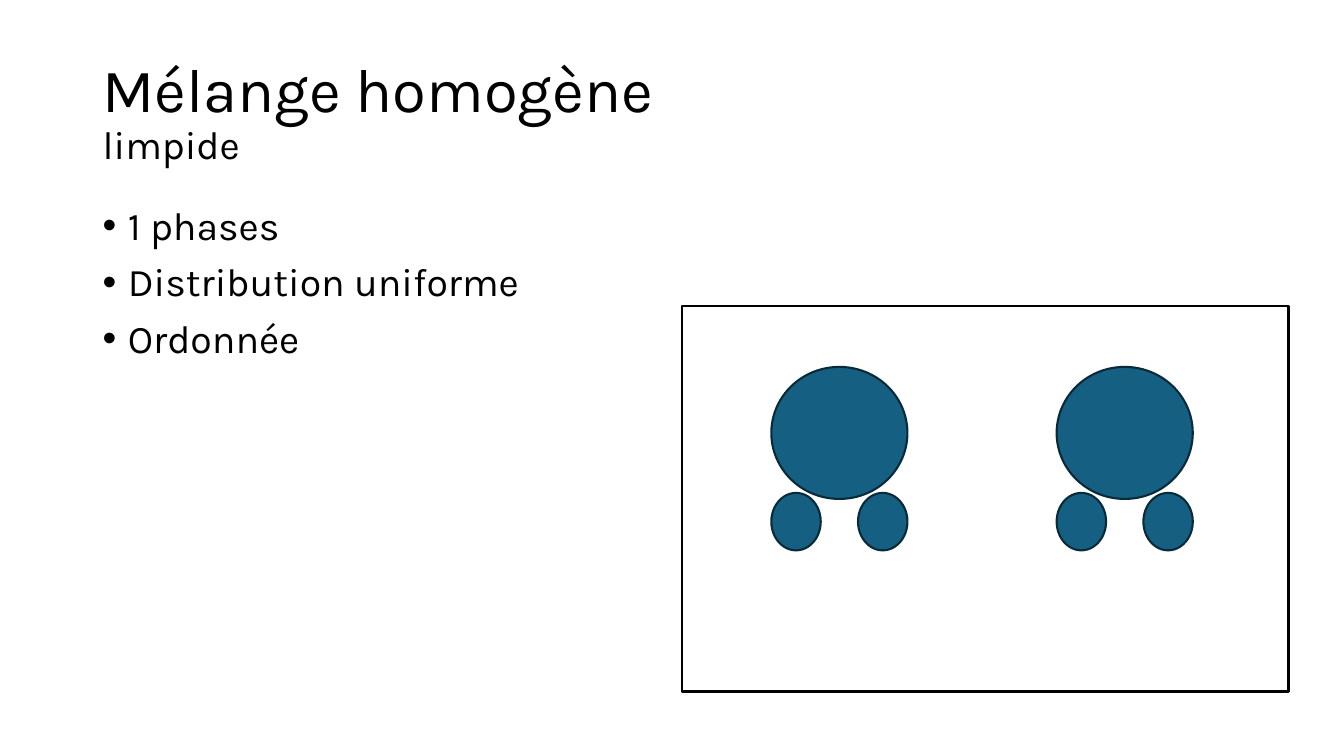
from lxml import etree
from pptx import Presentation
from pptx.dml.color import RGBColor
from pptx.enum.shapes import MSO_SHAPE
from pptx.enum.text import MSO_ANCHOR
from pptx.oxml.ns import qn
from pptx.util import Inches, Pt

RECTANGLE = MSO_SHAPE.RECTANGLE
OVAL = MSO_SHAPE.OVAL
TOP = MSO_ANCHOR.TOP
MIDDLE = MSO_ANCHOR.MIDDLE

FONT = "Karla"
COLORS = {
    "black": "000000",
    "white": "FFFFFF",
    "atom": "156082",
    "atom_line": "092A39",
}


def color(name):
    return RGBColor.from_string(COLORS[name])


def add_bullet(paragraph):
    properties = paragraph._p.get_or_add_pPr()
    properties.set("marL", str(Inches(0.25)))
    properties.set("indent", str(Inches(-0.25)))
    etree.SubElement(properties, qn("a:buFont"), typeface="Arial")
    etree.SubElement(properties, qn("a:buChar"), char="•")


def add_text(slide, paragraphs, left, top, width, height,
             anchor=TOP, space_before=0, bullets=False):
    box = slide.shapes.add_textbox(
        Inches(left), Inches(top), Inches(width), Inches(height))
    frame = box.text_frame
    frame.word_wrap = True
    frame.vertical_anchor = anchor
    for index, lines in enumerate(paragraphs):
        paragraph = frame.add_paragraph() if index else frame.paragraphs[0]
        paragraph.line_spacing = 0.9
        paragraph.space_before = Pt(space_before)
        if bullets:
            add_bullet(paragraph)
        for line_index, (text, size) in enumerate(lines):
            if line_index:
                paragraph.add_line_break()
            run = paragraph.add_run()
            run.text = text
            run.font.name = FONT
            run.font.size = Pt(size)
            run.font.color.rgb = color("black")


def add_figure(slide, kind, left, top, width, height, fill, line):
    shape = slide.shapes.add_shape(
        kind, Inches(left), Inches(top), Inches(width), Inches(height))
    shape.shadow.inherit = False
    shape.fill.solid()
    shape.fill.fore_color.rgb = color(fill)
    shape.line.color.rgb = color(line)
    shape.line.width = Pt(1.5)


def add_molecule(slide, left, top):
    atoms = [(0, 0, 1.35, 1.31), (0, 1.25, 0.49, 0.57), (0.86, 1.25, 0.49, 0.57)]
    for across, down, width, height in atoms:
        add_figure(slide, OVAL, left + across, top + down, width, height,
                   "atom", "atom_line")


def main():
    presentation = Presentation()
    presentation.slide_width = Inches(13.33)
    presentation.slide_height = Inches(7.5)
    slide = presentation.slides.add_slide(presentation.slide_layouts[6])

    add_text(slide, [[("Mélange homogène", 44), ("limpide", 28)]],
             0.92, 0.4, 11.5, 1.45, anchor=MIDDLE)
    properties = ["1 phases", "Distribution uniforme", "Ordonnée"]
    add_text(slide, [[(text, 28)] for text in properties],
             0.92, 2, 11.5, 4.76, space_before=10, bullets=True)

    add_figure(slide, RECTANGLE, 6.76, 3.04, 6.02, 3.82, "white", "black")
    for left in (7.65, 10.48):
        add_molecule(slide, left, 3.64)

    presentation.save("out.pptx")


if __name__ == "__main__":
    main()
